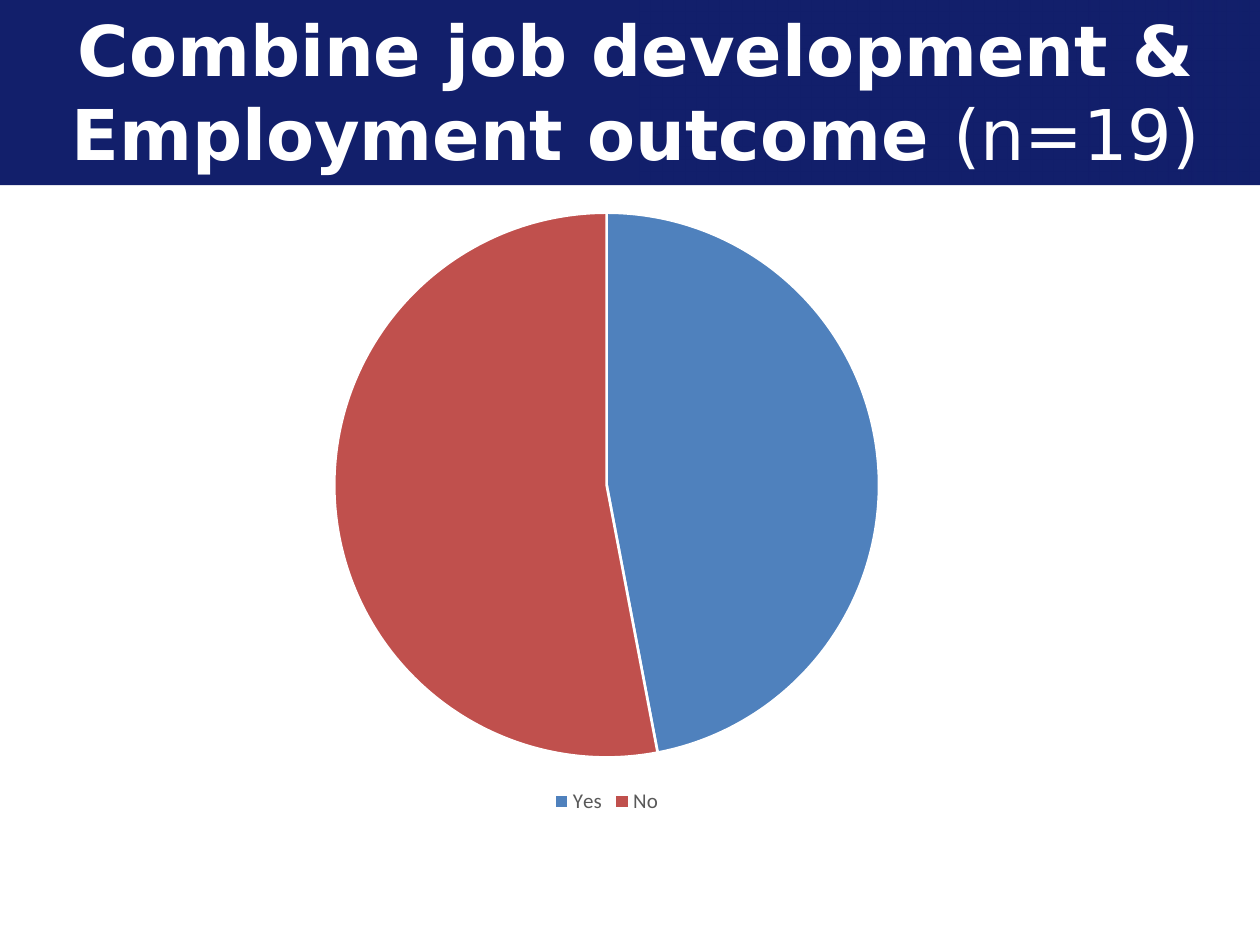
from lxml.etree import SubElement
from pptx import Presentation
from pptx.chart.data import CategoryChartData
from pptx.dml.color import RGBColor
from pptx.enum.chart import XL_CHART_TYPE, XL_LEGEND_POSITION
from pptx.enum.shapes import MSO_SHAPE
from pptx.enum.text import MSO_ANCHOR, MSO_AUTO_SIZE, PP_ALIGN
from pptx.oxml.ns import qn
from pptx.util import Inches, Pt

NAVY = RGBColor(0x12, 0x1F, 0x6B)
WHITE = RGBColor(0xFF, 0xFF, 0xFF)
BLUE = RGBColor(0x4F, 0x81, 0xBD)
RED = RGBColor(0xC0, 0x50, 0x4D)
GRAY = RGBColor(0x59, 0x59, 0x59)


class SlideBuilder:
    title_font = "DejaVu Sans"
    chart_font = "Calibri"

    def __init__(self, deck):
        self.page = deck.slides.add_slide(deck.slide_layouts[5])

    def banner(self, left, top, width, height):
        box = self.page.shapes.add_shape(
            MSO_SHAPE.RECTANGLE, Inches(left), Inches(top), Inches(width), Inches(height)
        )
        box.shadow.inherit = False
        box.fill.solid()
        box.fill.fore_color.rgb = NAVY
        box.line.fill.background()
        return box

    def fade(self, box, stops):
        box.fill.gradient()
        box.fill.gradient_angle = 180
        stop_list = box.fill._fill._gradFill.find(qn("a:gsLst"))
        for stop in list(stop_list):
            stop_list.remove(stop)
        for position, opacity in stops:
            stop = SubElement(stop_list, qn("a:gs"), pos=str(position * 1000))
            color = SubElement(stop, qn("a:srgbClr"), val=str(NAVY))
            SubElement(color, qn("a:alpha"), val=str(opacity * 1000))

    def title(self, left, top, width, height, parts):
        title = self.page.shapes.title
        title.left, title.top = Inches(left), Inches(top)
        title.width, title.height = Inches(width), Inches(height)
        frame = title.text_frame
        frame.word_wrap = True
        frame.auto_size = MSO_AUTO_SIZE.NONE
        frame.vertical_anchor = MSO_ANCHOR.MIDDLE
        para = frame.paragraphs[0]
        para.alignment = PP_ALIGN.CENTER
        para.font.name = self.title_font
        para.font.size = Pt(40)
        para.font.color.rgb = WHITE
        for text, bold in parts:
            span = para.add_run()
            span.text = text
            span.font.bold = bold
        self.page.shapes._spTree.append(title._element)

    def pie(self, left, top, width, height, slices):
        data = CategoryChartData()
        data.categories = [name for name, value, color in slices]
        data.add_series("Series 1", [value for name, value, color in slices])
        chart = self.page.shapes.add_chart(
            XL_CHART_TYPE.PIE, Inches(left), Inches(top), Inches(width), Inches(height), data
        ).chart
        chart.has_title = False
        chart.font.name = self.chart_font
        chart.font.size = Pt(10)
        chart.has_legend = True
        legend = chart.legend
        legend.position = XL_LEGEND_POSITION.BOTTOM
        legend.include_in_layout = False
        legend.font.name = self.chart_font
        legend.font.size = Pt(12)
        legend.font.color.rgb = GRAY
        plot = chart.plots[0]
        plot.vary_by_categories = True
        for index, (name, value, color) in enumerate(slices):
            point = plot.series[0].points[index]
            point.format.fill.solid()
            point.format.fill.fore_color.rgb = color
            point.format.line.color.rgb = WHITE
            point.format.line.width = Pt(1.5)


def main():
    deck = Presentation()
    deck.slide_width, deck.slide_height = Inches(10), Inches(7.5)
    builder = SlideBuilder(deck)
    builder.banner(0, 0, 10, 1.47)
    overlay = builder.banner(5.08, 0, 4.92, 1.46)
    builder.fade(overlay, [(0, 66), (36, 95), (77, 100)])
    builder.title(0.28, 0.21, 9.53, 1.02, [
        ("Combine job development & Employment outcome ", True),
        ("(n=19)", False),
    ])
    builder.pie(0.2, 1.55, 9.23, 4.95, [("Yes", 47, BLUE), ("No", 53, RED)])
    deck.save("out.pptx")


if __name__ == "__main__":
    main()
